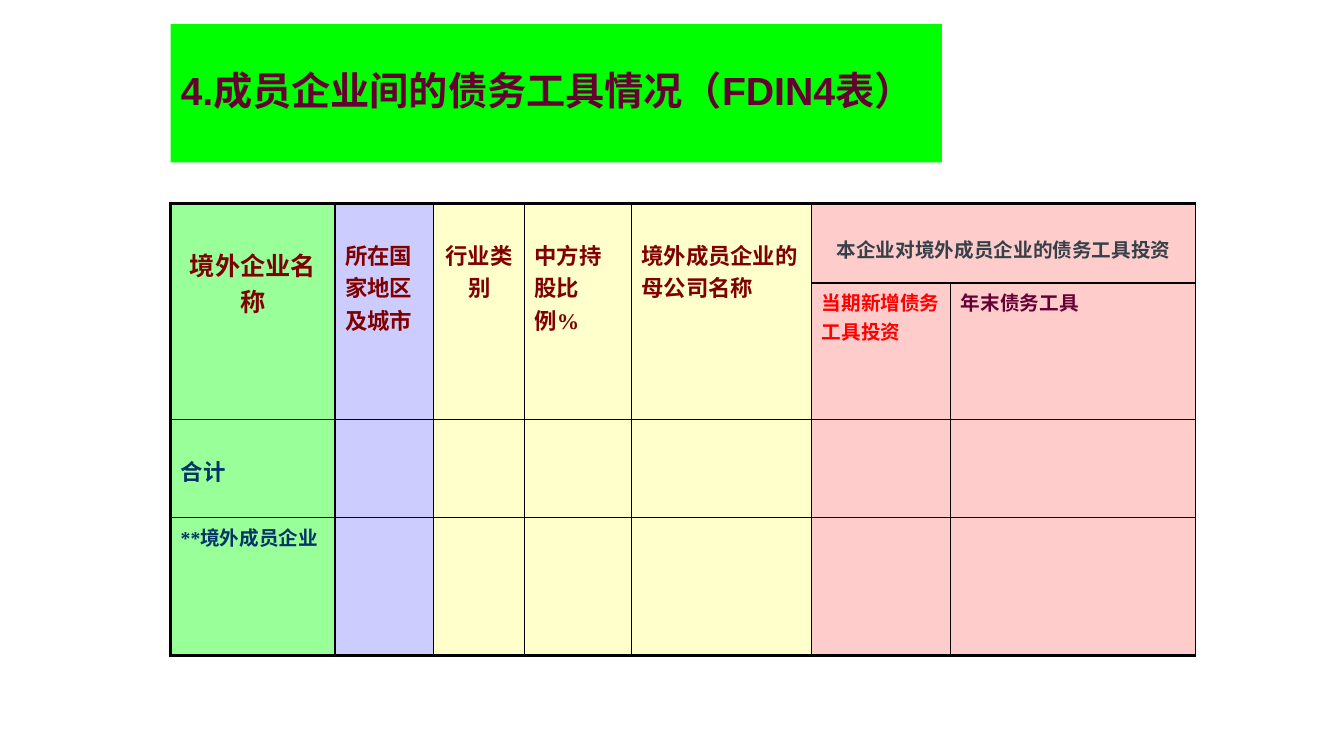
from lxml import etree
from pptx import Presentation
from pptx.dml.color import RGBColor
from pptx.enum.text import MSO_ANCHOR, PP_ALIGN
from pptx.oxml.ns import qn
from pptx.util import Pt

LEFT, CENTER = PP_ALIGN.LEFT, PP_ALIGN.CENTER
MIDDLE = MSO_ANCHOR.MIDDLE

TITLE = "4.成员企业间的债务工具情况（FDIN4表）"
X = 121.9
COL_WIDTHS = [117.4, 70.6, 64.8, 76.3, 128.9, 99.4, 175]
ROW_HEIGHTS = [56.6, 97.3, 70, 98.6]
GREEN, BLUE, YELLOW, PINK = "99FF99", "CCCCFF", "FFFFCC", "FFCCCC"
COL_FILLS = [GREEN, BLUE, YELLOW, YELLOW, YELLOW, PINK, PINK]
MERGES = [(0, c, 1, c) for c in range(5)] + [(0, 5, 0, 6)]
MAROON, NAVY = "800000", "003366"
THIN, THICK = 1, 2.25

# row, column, text, size, colour, alignment, top margin
TEXTS = [
    (0, 0, "境外企业名称", 18, MAROON, CENTER, 30),
    (0, 1, "所在国家地区及城市", 16, MAROON, LEFT, 25),
    (0, 2, "行业类别", 16, MAROON, CENTER, 25),
    (0, 3, "中方持股比例%", 16, MAROON, LEFT, 25),
    (0, 4, "境外成员企业的母公司名称", 16, MAROON, LEFT, 25),
    (0, 5, "本企业对境外成员企业的债务工具投资", 14, "364048", CENTER, 22),
    (1, 5, "当期新增债务工具投资", 14, "FF0000", LEFT, 3.6),
    (1, 6, "年末债务工具", 14, "660033", LEFT, 3.6),
    (2, 0, "合计", 16, NAVY, LEFT, 25),
    (3, 0, "**境外成员企业", 14, NAVY, LEFT, 3.6),
]


def rgb(value):
    return RGBColor.from_string(value)


def write(tf, text, font, size, color, align):
    p = tf.paragraphs[0]
    p.text = text
    p.alignment = align
    p.font.name = font
    p.font.size = Pt(size)
    p.font.bold = True
    p.font.color.rgb = rgb(color)
    return p


def set_borders(cell, widths):
    tc_pr = cell._tc.get_or_add_tcPr()
    for i, (side, width) in enumerate(widths.items()):
        ln = etree.Element(qn("a:ln" + side), w=str(Pt(width)))
        fill = etree.SubElement(ln, qn("a:solidFill"))
        etree.SubElement(fill, qn("a:srgbClr"), val="000000")
        tc_pr.insert(i, ln)


prs = Presentation()
prs.slide_width, prs.slide_height = Pt(960), Pt(540)
s = prs.slides.add_slide(prs.slide_layouts[6])

title = s.shapes.add_textbox(Pt(X), Pt(17.2), Pt(551), Pt(98.8))
title.fill.solid()
title.fill.fore_color.rgb = rgb("00FF00")
tf = title.text_frame
tf.word_wrap = True
tf.vertical_anchor = MIDDLE
p = write(tf, TITLE, "Arial", 28, "660033", LEFT)
p.line_spacing = 0.9

rows, cols = len(ROW_HEIGHTS), len(COL_WIDTHS)
table = s.shapes.add_table(rows, cols, Pt(X), Pt(145.6),
                           Pt(sum(COL_WIDTHS)), Pt(sum(ROW_HEIGHTS))).table
table.first_row = table.horz_banding = False
for col, width in zip(table.columns, COL_WIDTHS):
    col.width = Pt(width)
for row, height in zip(table.rows, ROW_HEIGHTS):
    row.height = Pt(height)

for r in range(rows):
    for c in range(cols):
        cell = table.cell(r, c)
        cell.fill.solid()
        cell.fill.fore_color.rgb = rgb(COL_FILLS[c])
        set_borders(cell, {
            "L": THICK if c == 0 else THIN,
            "R": THIN,
            "T": THICK if r == 0 else THIN,
            "B": THICK if r == rows - 1 else THIN,
        })

for r1, c1, r2, c2 in MERGES:
    table.cell(r1, c1).merge(table.cell(r2, c2))

for r, c, text, size, color, align, top in TEXTS:
    cell = table.cell(r, c)
    cell.margin_top = Pt(top)
    write(cell.text_frame, text, "Times New Roman", size, color, align)

prs.save("out.pptx")
